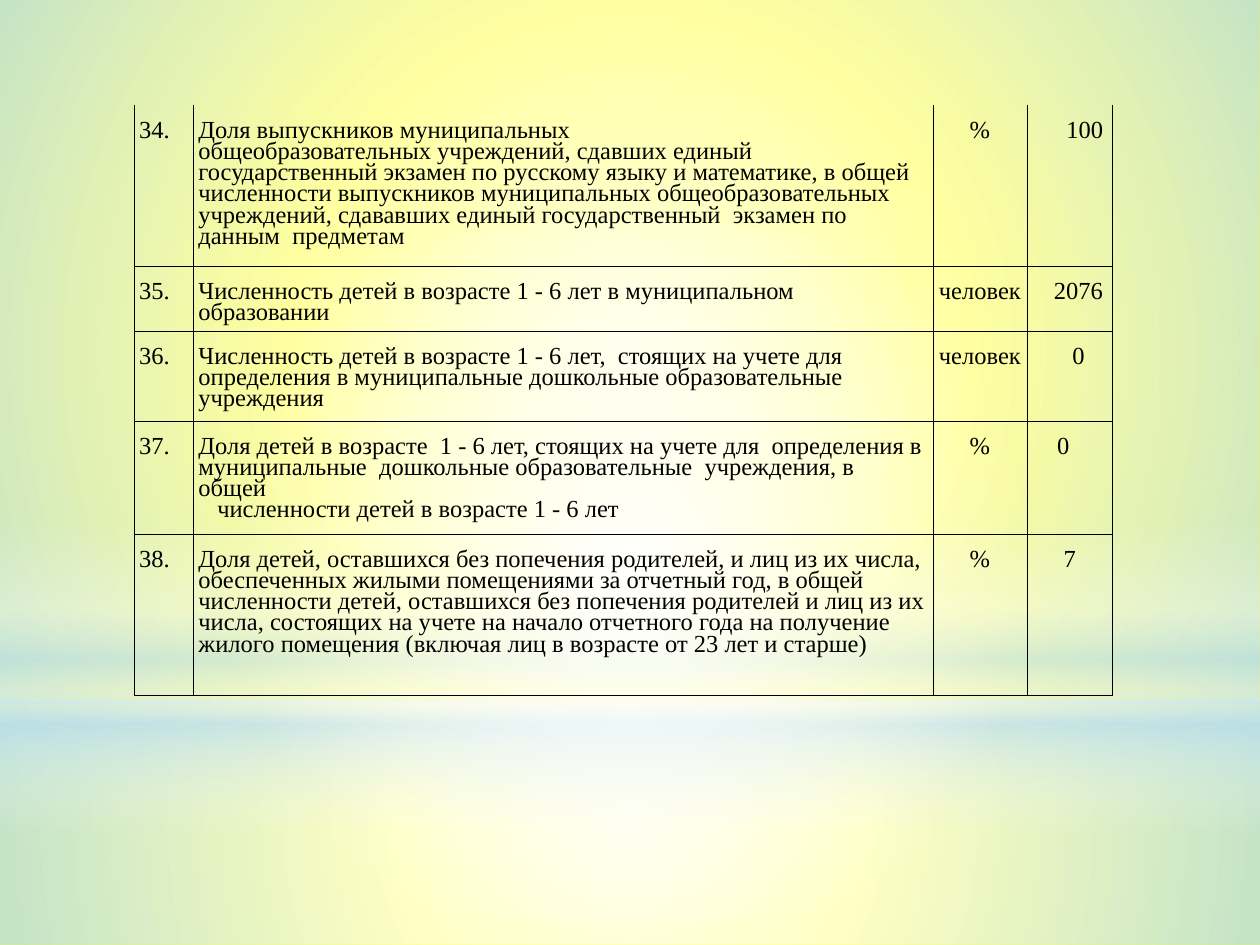
import pptx
import pptx.dml.color
import pptx.enum.shapes
import pptx.enum.text
import pptx.oxml.ns
import pptx.util
from lxml import etree

COLORS = {"ground": "FFFF00", "white": "FFFFFF", "sky": "B4DCFA", "ink": "000000"}
ALIGN = pptx.enum.text.PP_ALIGN
SHAPE = pptx.enum.shapes.MSO_SHAPE


def color(name):
    return pptx.dml.color.RGBColor.from_string(COLORS[name])


def node(parent, tag, **attrs):
    return etree.SubElement(parent, pptx.oxml.ns.qn(tag), {k: str(v) for k, v in attrs.items()})


def write(frame, words, font="Times New Roman", size=14, ink="ink",
          align=ALIGN.LEFT, pitch=0.78, indent=0):
    frame.word_wrap = True
    for i, line in enumerate(words):
        para = frame.paragraphs[0] if i == 0 else frame.add_paragraph()
        para.alignment = align
        para.line_spacing = pitch
        run = para.add_run()
        run.text = line
        run.font.name = font
        run.font.size = pptx.util.Pt(size)
        run.font.color.rgb = color(ink)
    if indent:
        para._p.get_or_add_pPr().set("indent", str(pptx.util.Inches(indent)))


class Deck:
    unit = 0.1
    inset = 0.04
    head = 0.13
    rule = 0.06

    def __init__(self, cols, rows):
        self.show = pptx.Presentation()
        self.show.slide_width = self.span(cols)
        self.show.slide_height = self.span(rows)
        self.slide = self.show.slides.add_slide(self.show.slide_layouts[6])
        fill = self.slide.background.fill
        fill.solid()
        fill.fore_color.rgb = color("ground")

    def span(self, count):
        return pptx.util.Inches(count * self.unit)

    def glow(self, kind, box, stops, angle=None):
        shape = self.slide.shapes.add_shape(kind, *map(self.span, box))
        shape.shadow.inherit = False
        shape.line.fill.background()
        shape.fill.background()
        props = shape._element.spPr
        blank = props.find(pptx.oxml.ns.qn("a:noFill"))
        grad = node(props, "a:gradFill", rotWithShape=1)
        props.replace(blank, grad)
        steps = node(grad, "a:gsLst")
        for place, name, alpha in stops:
            stop = node(steps, "a:gs", pos=place * 1000)
            tint = node(stop, "a:srgbClr", val=COLORS[name])
            node(tint, "a:alpha", val=alpha * 1000)
        if angle is None:
            ring = node(grad, "a:path", path="circle")
            node(ring, "a:fillToRect", **dict.fromkeys("ltrb", 50000))
        else:
            node(grad, "a:lin", ang=angle * 60000, scaled=0)

    def edge(self, cell, top):
        props = cell._tc.get_or_add_tcPr()
        for i, side in enumerate(("lnL", "lnR", "lnT", "lnB")):
            line = node(props, "a:" + side, w=pptx.util.Pt(self.rule))
            if side == "lnT" and not top:
                node(line, "a:noFill")
            else:
                node(node(line, "a:solidFill"), "a:srgbClr", val=COLORS["ink"])
            props.insert(i, line)

    def cell(self, cell, words, shift=0, top=True, **form):
        cell.margin_left = pptx.util.Inches(self.inset + max(shift, 0))
        cell.margin_right = pptx.util.Inches(self.inset + max(-shift, 0))
        cell.margin_top = pptx.util.Inches(self.head)
        cell.margin_bottom = 0
        cell.fill.background()
        self.edge(cell, top)
        write(cell.text_frame, words, **form)

    def table(self, left, top, cols, rows, data):
        box = map(self.span, (left, top, sum(cols), sum(rows)))
        grid = self.slide.shapes.add_table(len(rows), len(cols), *box).table
        grid.first_row = grid.horz_banding = False
        for col, width in zip(grid.columns, cols):
            col.width = self.span(width)
        for row, height in zip(grid.rows, rows):
            row.height = self.span(height)
        for r, (label, goal, measure, value, shift, indent) in enumerate(data):
            lined = r > 0
            self.cell(grid.cell(r, 0), [label], top=lined)
            self.cell(grid.cell(r, 1), goal, top=lined, indent=indent)
            self.cell(grid.cell(r, 2), [measure], top=lined, align=ALIGN.CENTER)
            self.cell(grid.cell(r, 3), [value], shift, lined, align=ALIGN.CENTER)


GOALS = [
    ("34.", ["Доля выпускников муниципальных",
             "общеобразовательных учреждений, сдавших единый государственный экзамен "
             "по русскому языку и математике, в общей численности выпускников "
             "муниципальных общеобразовательных учреждений, сдававших единый "
             "государственный  экзамен по данным  предметам"], "%", "100", 0.24, 0),
    ("35.", ["Численность детей в возрасте 1 - 6 лет в муниципальном образовании"],
     "человек", "2076", 0.14, 0),
    ("36.", ["Численность детей в возрасте 1 - 6 лет,  стоящих на учете для  определения "
             "в муниципальные дошкольные образовательные учреждения"],
     "человек", "0", 0.14, 0),
    ("37.", ["Доля детей в возрасте  1 - 6 лет, стоящих на учете для  определения в "
             "муниципальные  дошкольные образовательные  учреждения, в общей",
             "численности детей в возрасте 1 - 6 лет"], "%", "0", -0.1, 0.15),
    ("38.", ["Доля детей, оставшихся без попечения родителей, и лиц из их числа, "
             "обеспеченных жилыми помещениями за отчетный год, в общей численности детей, "
             "оставшихся без попечения родителей и лиц из их числа, состоящих на учете на "
             "начало отчетного года на получение жилого помещения (включая лиц в возрасте "
             "от 23 лет и старше)"], "%", "7", 0, 0),
]


def main():
    deck = Deck(100, 75)
    deck.glow(SHAPE.RECTANGLE, (0, 55.8, 100, 19.2),
              [(0, "white", 91), (37, "white", 76), (100, "sky", 79)])
    deck.glow(SHAPE.RECTANGLE, (0, 0, 100, 55.8),
              [(0, "white", 89), (48, "white", 62), (100, "sky", 79)])
    deck.glow(SHAPE.RECTANGLE, (0, 41.2, 100, 25),
              [(0, "white", 0), (29, "white", 30), (45, "sky", 40),
               (55, "white", 26), (65, "sky", 60), (100, "white", 0)], angle=90)
    deck.glow(SHAPE.OVAL, (0, 17.5, 100, 55.8), [(0, "white", 100), (56, "white", 0)])
    deck.table(10.65, 8.35, [4.7, 58.7, 7.45, 6.8], [12.8, 5.15, 7.1, 9, 12.8], GOALS)
    deck.show.save("out.pptx")


if __name__ == "__main__":
    main()
